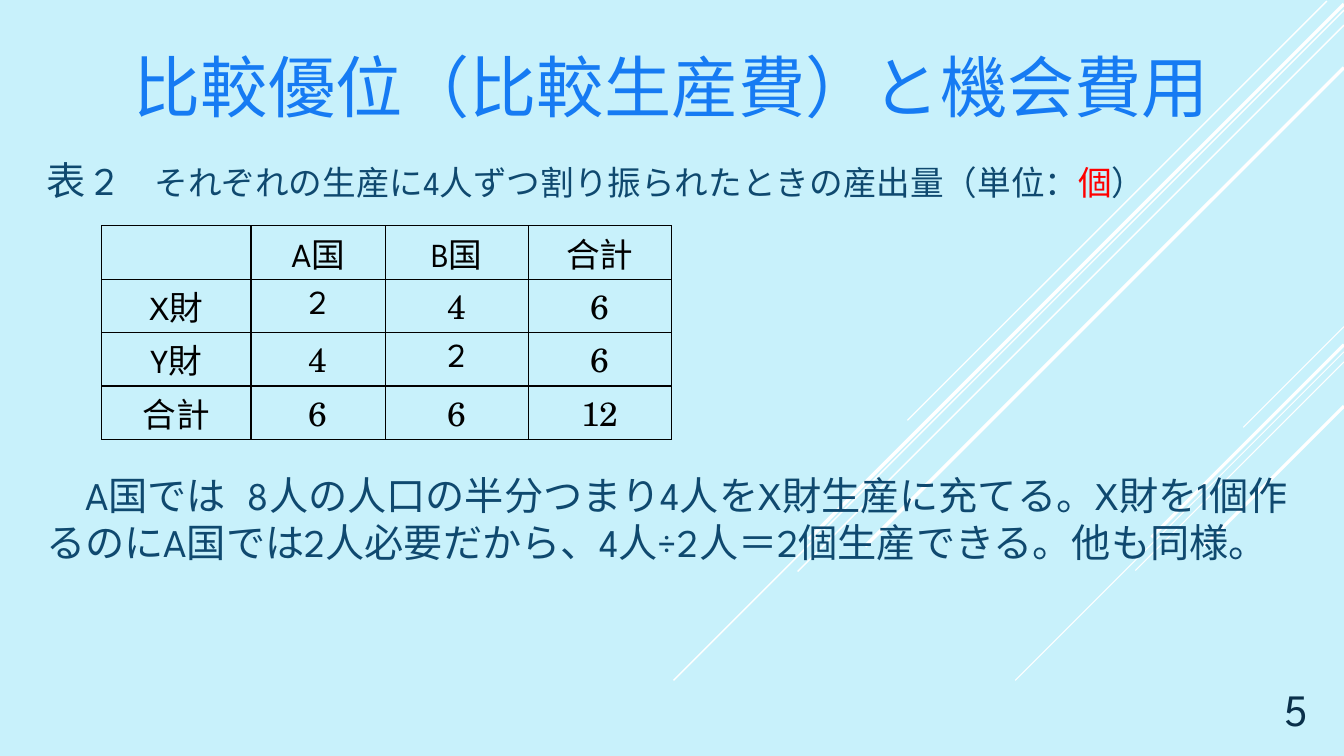
import pptx
import pptx.util
import pptx.dml.color
import pptx.enum.shapes
import pptx.enum.text
import pptx.oxml
import pptx.oxml.ns

Inches = pptx.util.Inches
Pt = pptx.util.Pt
RGBColor = pptx.dml.color.RGBColor
ALIGN = pptx.enum.text.PP_ALIGN
ANCHOR = pptx.enum.text.MSO_ANCHOR

SKY = RGBColor(0xC8, 0xF1, 0xFB)
BLUE = RGBColor(0x16, 0x7B, 0xF3)
NAVY = RGBColor(0x0F, 0x49, 0x6F)
DARK = RGBColor(0x0A, 0x30, 0x4A)
RED = RGBColor(0xFF, 0, 0)
BLACK = RGBColor(0, 0, 0)
WHITE = RGBColor(0xFF, 0xFF, 0xFF)
SANS = "League Spartan"
SERIF = "TeX Gyre Schola"

TITLE = "比較優位（比較生産費）と機会費用"
CAPTION = [
    ("表 2\u3000", 28, NAVY),
    ("それぞれの生産に4人ずつ割り振られたときの産出量（単位：", 24, NAVY),
    ("個", 24, RED),
    ("）", 24, NAVY),
]
NOTE = "　A国では\t8人の人口の半分つまり4人をX財生産に充てる。X財を1個作るのにA国では2人必要だから、4人÷2人＝2個生産できる。他も同様。"
PAGE = "5"
GRID = [
    ["", "A国", "B国", "合計"],
    ["X財", "2", "4", "6"],
    ["Y財", "4", "2", "6"],
    ["合計", "6", "6", "12"],
]
SERIFS = {"合計", "4", "6", "12"}
COLS = [1.48, 1.33, 1.42, 1.42]
ROW = 0.53
RAYS = [
    (13.33, 3.24, 1, 0.75),
    (13.33, 3.49, 3.26, 0.75),
    (13.33, 3.59, 2.07, 0.75),
    (13.33, 3.42, 1.91, 2.25),
    (13.33, 4.03, 1.39, 2.25),
    (13.16, 0.01, 4.16, 1),
    (13.33, 0.1, 6.65, 1),
    (13.33, 0.25, 5.42, 1),
    (13.33, 0.04, 5.31, 2.5),
    (13.33, 0.67, 4.75, 2.5),
]


def write(para, text, size=28, color=NAVY, font=SANS, align=ALIGN.LEFT):
    para.alignment = align
    run = para.add_run()
    run.text = text
    run.font.size = Pt(size)
    run.font.name = font
    run.font.color.rgb = color


def add_box(slide, left, top, width, height):
    box = slide.shapes.add_textbox(*map(Inches, (left, top, width, height)))
    box.text_frame.word_wrap = True
    return box.text_frame


def add_ray(slide, left, top, span, weight):
    ends = (left, top, left - span, top + span)
    ray = slide.shapes.add_connector(
        pptx.enum.shapes.MSO_CONNECTOR.STRAIGHT, *map(Inches, ends))
    ray.line.color.rgb = WHITE
    ray.line.width = Pt(weight)
    ray._element.spPr.append(pptx.oxml.parse_xml(
        f'<a:effectLst {pptx.oxml.ns.nsdecls("a")}/>'))


def add_edges(cell):
    props = cell._tc.get_or_add_tcPr()
    for place, side in enumerate(("lnL", "lnR", "lnT", "lnB")):
        props.insert(place, pptx.oxml.parse_xml(
            f'<a:{side} {pptx.oxml.ns.nsdecls("a")} w="12700"><a:solidFill>'
            f'<a:srgbClr val="{BLACK}"/></a:solidFill></a:{side}>'))


def add_grid(slide):
    size = (1.01, 2.24, sum(COLS), ROW * len(GRID))
    table = slide.shapes.add_table(
        len(GRID), len(COLS), *map(Inches, size)).table
    table.first_row = table.horz_banding = False
    for col, width in zip(table.columns, COLS):
        col.width = Inches(width)
    for row, texts in zip(table.rows, GRID):
        row.height = Inches(ROW)
        for cell, text in zip(row.cells, texts):
            cell.fill.background()
            cell.vertical_anchor = ANCHOR.MIDDLE
            cell.margin_left = cell.margin_right = Inches(0.07)
            cell.margin_top = cell.margin_bottom = 0
            add_edges(cell)
            if text:
                write(cell.text_frame.paragraphs[0], text, size=24,
                      color=BLACK, font=SERIF if text in SERIFS else SANS,
                      align=ALIGN.CENTER)


def main():
    deck = pptx.Presentation()
    deck.slide_width, deck.slide_height = Inches(13.33), Inches(7.5)
    slide = deck.slides.add_slide(deck.slide_layouts[5])
    slide.background.fill.solid()
    slide.background.fill.fore_color.rgb = SKY

    for ray in RAYS:
        add_ray(slide, *ray)

    title = slide.shapes.title
    title.left, title.top = Inches(0.36), Inches(0.36)
    title.width, title.height = Inches(12.6), Inches(0.94)
    title.text_frame.vertical_anchor = ANCHOR.BOTTOM
    write(title.text_frame.paragraphs[0], TITLE, size=48, color=BLUE,
          align=ALIGN.CENTER)

    head = add_box(slide, 0.36, 1.5, 12.6, 0.6).paragraphs[0]
    head.line_spacing = Pt(33.6)
    for text, size, color in CAPTION:
        write(head, text, size=size, color=color)

    add_grid(slide)

    note = add_box(slide, 0.36, 4.63, 12.6, 1.6).paragraphs[0]
    note.line_spacing = Pt(33.6)
    write(note, NOTE)

    page = add_box(slide, 12.32, 6.74, 0.75, 0.61)
    page.vertical_anchor = ANCHOR.BOTTOM
    write(page.paragraphs[0], PAGE, size=32, color=DARK, align=ALIGN.RIGHT)

    deck.save("out.pptx")


if __name__ == "__main__":
    main()
